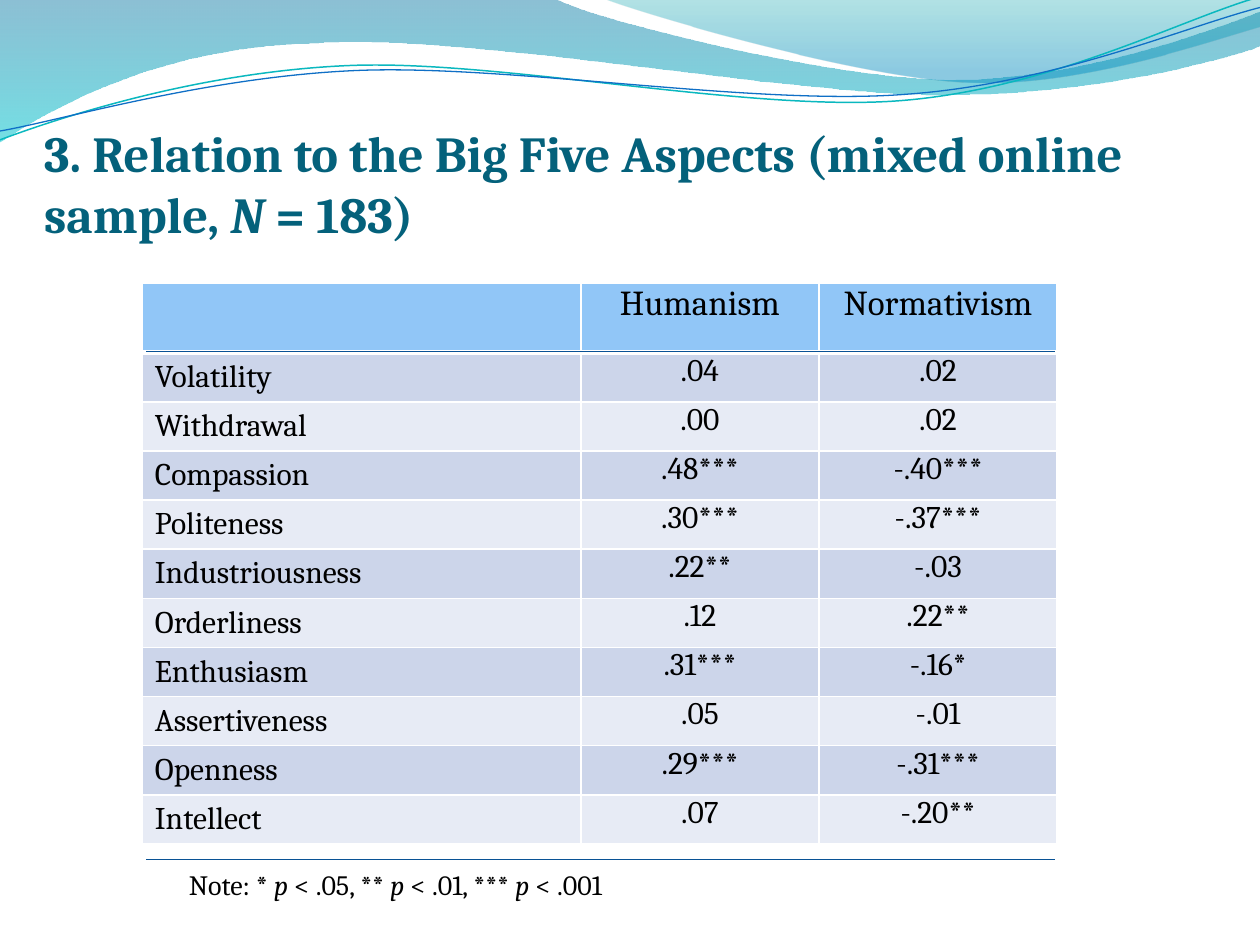
import math
import pptx
import pptx.dml.color
import pptx.enum.shapes
import pptx.enum.text
import pptx.oxml
import pptx.oxml.ns
import pptx.util
from dataclasses import dataclass

Inches = pptx.util.Inches
Pt = pptx.util.Pt
Align = pptx.enum.text.PP_ALIGN
AutoSize = pptx.enum.text.MSO_AUTO_SIZE
qn = pptx.oxml.ns.qn
NAMESPACE = pptx.oxml.ns.nsdecls("a")


@dataclass(frozen=True)
class Theme:
    font: str = "Cambria"
    title: str = "04617B"
    text: str = "000000"
    rule: str = "095295"
    header: str = "91C6F7"
    bands: tuple = ("CCD5EA", "E7EBF5")
    border: str = "FFFFFF"
    wave_back: tuple = ((0, "0074A1", 45), (1, "00C6CF", 55))
    wave_front: tuple = ((0, "00A1A9", 30), (0.8, "008BBF", 45))
    curve_teal: str = "0AB8BF"
    curve_blue: str = "0F6FC6"
    title_size: float = 28.8
    header_size: int = 20
    cell_size: int = 18
    note_size: int = 16


def rgb(value):
    return pptx.dml.color.RGBColor.from_string(value)


def write_text(paragraph, pieces, font, size, color, bold=False, align=Align.LEFT):
    """Fill a paragraph with (text, italic) pieces in one format."""
    paragraph.alignment = align
    for text, italic in pieces:
        run = paragraph.add_run()
        run.text = text
        run.font.name = font
        run.font.size = Pt(size)
        run.font.bold = bold
        run.font.italic = italic
        run.font.color.rgb = rgb(color)


def turn(point, center, degrees):
    """Rotate a point clockwise on the slide about a center."""
    angle = math.radians(degrees)
    dx, dy = point[0] - center[0], point[1] - center[1]
    return (center[0] + dx * math.cos(angle) - dy * math.sin(angle),
            center[1] + dx * math.sin(angle) + dy * math.cos(angle))


class SlideBuilder:
    def __init__(self, slide, theme):
        self.slide = slide
        self.theme = theme

    def outline(self, start, segments, close, center=(0, 0), rotation=0):
        """Draw segments of one point (straight) or three points (cubic)."""
        points = [start] + [point for segment in segments for point in segment]
        points = [turn(point, center, -rotation) for point in points]
        points = [(Inches(x), Inches(y)) for x, y in points]
        builder = self.slide.shapes.build_freeform(*points[0], scale=1.0)
        builder.add_line_segments(points[1:], close=close)
        shape = builder.convert_to_shape()
        shape.shadow.inherit = False
        shape.rotation = rotation
        lines = iter(list(shape.element.iter(qn("a:lnTo"))))
        for segment in segments:
            first = next(lines)
            if len(segment) == 3:
                first.tag = qn("a:cubicBezTo")
                for line in (next(lines), next(lines)):
                    first.append(line[0])
                    line.getparent().remove(line)
        return shape

    def wave(self, start, segments, stops):
        """Draw a filled wave; stops are (position, colour, opacity percent)."""
        shape = self.outline(start, segments, close=True)
        shape.line.fill.background()
        shape.fill.gradient()
        shape.fill.gradient_angle = 270
        for stop, (position, color, opacity) in zip(shape.fill.gradient_stops, stops):
            stop.position = position
            stop.color.rgb = rgb(color)
        color_nodes = shape.element.spPr.findall(".//" + qn("a:srgbClr"))
        for node, (position, color, opacity) in zip(color_nodes, stops):
            node.append(pptx.oxml.parse_xml(
                f'<a:alpha {NAMESPACE} val="{opacity * 1000}"/>'))

    def curve(self, start, segments, center, color, width):
        shape = self.outline(start, segments, False, center, rotation=357.3)
        shape.fill.background()
        shape.line.color.rgb = rgb(color)
        shape.line.width = Pt(width)

    def title(self, pieces, left, top, width, height):
        shape = self.slide.shapes.title
        shape.left, shape.top = Inches(left), Inches(top)
        shape.width, shape.height = Inches(width), Inches(height)
        frame = shape.text_frame
        frame.auto_size = AutoSize.NONE
        frame.word_wrap = True
        frame.vertical_anchor = pptx.enum.text.MSO_ANCHOR.BOTTOM
        frame.margin_left = frame.margin_right = frame.margin_bottom = 0
        frame.margin_top = Inches(0.05)
        write_text(frame.paragraphs[0], pieces, self.theme.font,
                   self.theme.title_size, self.theme.title, bold=True)
        shape.element.getparent().append(shape.element)  # in front of the waves

    def cell(self, cell, text, fill, size, is_label):
        cell.fill.solid()
        cell.fill.fore_color.rgb = rgb(fill)
        if not is_label:
            cell.margin_left = cell.margin_right = Inches(0.07)
            cell.margin_top = cell.margin_bottom = 0
        if text:
            write_text(cell.text_frame.paragraphs[0], [(text, False)], self.theme.font,
                       size, self.theme.text, align=Align.LEFT if is_label else Align.CENTER)

    def header_borders(self, cell):
        properties = cell._tc.get_or_add_tcPr()
        for index, (side, width) in enumerate(zip("LRTB", (1, 1, 1, 3))):
            properties.insert(index, pptx.oxml.parse_xml(
                f'<a:ln{side} {NAMESPACE} w="{Pt(width)}"><a:solidFill>'
                f'<a:srgbClr val="{self.theme.border}"/></a:solidFill></a:ln{side}>'))

    def table(self, rows, left, top, widths, header_height, row_height):
        theme = self.theme
        height = header_height + row_height * (len(rows) - 1)
        table = self.slide.shapes.add_table(
            len(rows), len(widths), Inches(left), Inches(top),
            Inches(sum(widths)), Inches(height)).table
        table.first_row = table.horz_banding = False
        for column, width in zip(table.columns, widths):
            column.width = Inches(width)
        for row_index, values in enumerate(rows):
            is_header = row_index == 0
            table.rows[row_index].height = Inches(header_height if is_header else row_height)
            fill = theme.header if is_header else theme.bands[(row_index - 1) % 2]
            size = theme.header_size if is_header else theme.cell_size
            for column_index, text in enumerate(values):
                cell = table.cell(row_index, column_index)
                self.cell(cell, text, fill, size, is_label=column_index == 0)
                if is_header:
                    self.header_borders(cell)

    def note(self, pieces, left, top, width, height):
        frame = self.slide.shapes.add_textbox(
            Inches(left), Inches(top), Inches(width), Inches(height)).text_frame
        frame.word_wrap = False
        frame.auto_size = AutoSize.SHAPE_TO_FIT_TEXT
        write_text(frame.paragraphs[0], pieces, self.theme.font,
                   self.theme.note_size, self.theme.text)

    def rule(self, left, right, y):
        line = self.slide.shapes.add_connector(
            pptx.enum.shapes.MSO_CONNECTOR.STRAIGHT,
            Inches(left), Inches(y), Inches(right), Inches(y))
        line.line.color.rgb = rgb(self.theme.rule)
        line.line.width = Pt(0.75)
        line.element.spPr.append(pptx.oxml.parse_xml(f'<a:effectLst {NAMESPACE}/>'))


CORRELATIONS = [
    ("", "Humanism", "Normativism"),
    ("Volatility", ".04", ".02"),
    ("Withdrawal", ".00", ".02"),
    ("Compassion", ".48***", "-.40***"),
    ("Politeness", ".30***", "-.37***"),
    ("Industriousness", ".22**", "-.03"),
    ("Orderliness", ".12", ".22**"),
    ("Enthusiasm", ".31***", "-.16*"),
    ("Assertiveness", ".05", "-.01"),
    ("Openness", ".29***", "-.31***"),
    ("Intellect", ".07", "-.20**"),
]


def main():
    presentation = pptx.Presentation()
    presentation.slide_width, presentation.slide_height = Inches(10), Inches(7.5)
    slide = presentation.slides.add_slide(presentation.slide_layouts[5])
    theme = Theme()
    builder = SlideBuilder(slide, theme)
    builder.wave((0, 0), [[(4.4, -0.01)], [(4.76, 0.17), (6.64, 0.63), (7.58, 0.63)],
                          [(8.53, 0.63), (9.58, 0.26), (10, 0.09)], [(10.01, 0.36)],
                          [(9.83, 0.44), (8.7, 0.76), (7.46, 0.75)],
                          [(6.22, 0.75), (3.82, 0.28), (2.57, 0.34)],
                          [(1.29, 0.36), (0.46, 0.83), (-0.01, 1.13)],
                          [(0, 0)]], theme.wave_back)
    builder.wave((4.79, -0.01), [[(5.09, 0.11), (6.82, 0.62), (7.69, 0.65)],
                                 [(8.56, 0.69), (9.61, 0.32), (10, 0.21)],
                                 [(10, 0)], [(4.79, -0.01)]], theme.wave_front)
    builder.curve((0, 1.11), [[(0.48, 0.93), (1.58, 0.57), (2.77, 0.52)],
                              [(3.95, 0.47), (5.93, 0.89), (7.13, 0.8)],
                              [(8.33, 0.71), (9.38, 0.15), (9.98, -0.02)]],
                  (4.99, 0.58), theme.curve_teal, 0.85)
    builder.curve((0, 1.04), [[(0.47, 0.96), (1.64, 0.61), (2.83, 0.56)],
                              [(4.03, 0.51), (5.97, 0.84), (7.17, 0.75)],
                              [(8.36, 0.67), (9.41, 0.21), (10, 0.06)]],
                  (5, 0.59), theme.curve_blue, 0.75)
    builder.title([("3. Relation to the Big Five Aspects (mixed online sample, ", False),
                   ("N", True), (" = 183)", False)], 0.35, 0.99, 9, 0.94)
    builder.table(CORRELATIONS, 1.13, 2.25, (3.48, 1.89, 1.89), 0.55, 0.39)
    builder.note([("Note: * ", False), ("p", True), (" < .05, ** ", False), ("p", True),
                  (" < .01, *** ", False), ("p", True), (" < .001", False)],
                 1.4, 6.84, 3.72, 0.37)
    for y in (2.79, 6.82):
        builder.rule(1.16, 8.37, y)
    presentation.save("out.pptx")


if __name__ == "__main__":
    main()
